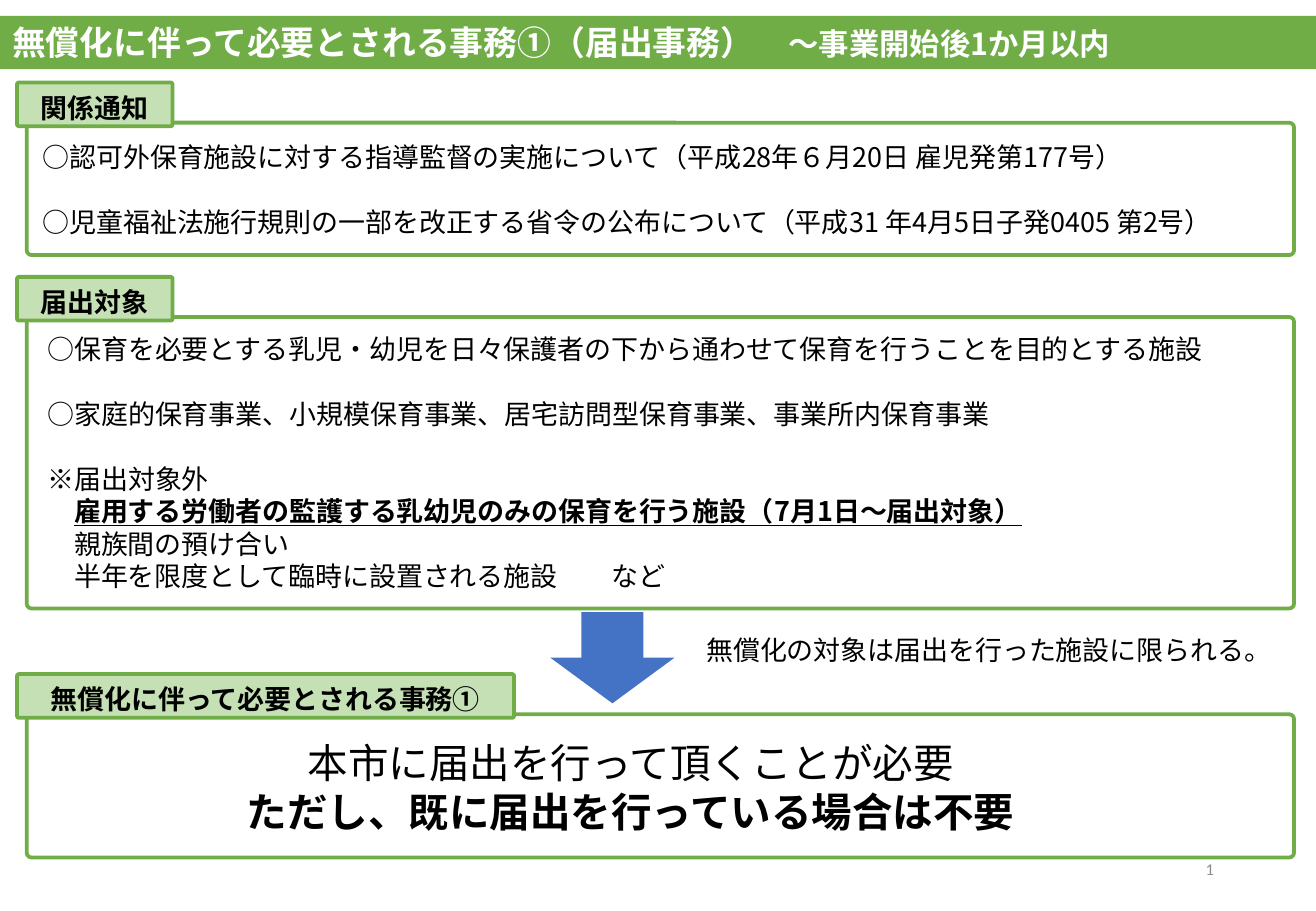
from lxml.etree import SubElement
from pptx import Presentation
from pptx.dml.color import RGBColor
from pptx.enum.shapes import MSO_SHAPE
from pptx.enum.text import MSO_ANCHOR, MSO_AUTO_SIZE, PP_ALIGN
from pptx.oxml.ns import qn
from pptx.util import Inches, Pt

GREEN = RGBColor(0x70, 0xAD, 0x47)
PALE_GREEN = RGBColor(0xC5, 0xE0, 0xB4)
BLUE = RGBColor(0x44, 0x72, 0xC4)
GREY = RGBColor(0x8C, 0x8C, 0x8C)
WHITE = RGBColor(0xFF, 0xFF, 0xFF)
BLACK = RGBColor(0, 0, 0)
FONT = "Noto Sans CJK JP"
LINE_HEIGHT = 1.2
CORNER = 0.04
GAP = {"space_after": Pt(19.2)}
INDENT = 0.22

# Each paragraph is (runs, paragraph format, left indent); each run is (text, font format).
TITLE = [([("無償化に伴って必要とされる事務①（届出事務）　", {"size": Pt(20), "bold": True}),
           ("～事業開始後1か月以内", {"size": Pt(18), "bold": True})], {}, 0)]
NOTICES = [
    ([("○認可外保育施設に対する指導監督の実施について（平成28年６月20日 雇児発第177号）", {})], GAP, 0),
    ([("○児童福祉法施行規則の一部を改正する省令の公布について（平成31 年4月5日子発0405 第2号）", {})], {}, 0),
]
TARGETS = [
    ([("○保育を必要とする乳児・幼児を日々保護者の下から通わせて保育を行うことを目的とする施設", {})], GAP, 0),
    ([("○家庭的保育事業、小規模保育事業、居宅訪問型保育事業、事業所内保育事業", {})], GAP, 0),
    ([("※届出対象外", {})], {}, 0),
    ([("雇用する労働者の監護する乳幼児のみの保育を行う施設（7月1日～届出対象）",
       {"bold": True, "underline": True})], {}, INDENT),
    ([("親族間の預け合い", {})], {}, INDENT),
    ([("半年を限度として臨時に設置される施設　　など", {})], {}, INDENT),
]
CENTERED = {"alignment": PP_ALIGN.CENTER}
REMARK = [([("無償化の対象は届出を行った施設に限られる。", {})], CENTERED, 0)]
CONCLUSION = [
    ([("本市に届出を行って頂くことが必要", {})], CENTERED, 0),
    ([("ただし、既に届出を行っている場合は不要", {"bold": True})], CENTERED, 0),
]
# label, label width, panel top, panel height
SECTIONS = [
    ("関係通知", 1.28, 1.01, 1.09),
    ("届出対象", 1.28, 2.61, 2.4),
    ("無償化に伴って必要とされる事務①", 4.09, 5.88, 1.18),
]


def set_values(target, values):
    for name, value in values.items():
        setattr(target, name, value)


def place(shape, left, top, width, height):
    set_values(shape, {"left": Inches(left), "top": Inches(top),
                       "width": Inches(width), "height": Inches(height)})


def write(shape, paragraphs, size=16, color=BLACK, anchor=MSO_ANCHOR.TOP):
    frame = shape.text_frame
    set_values(frame, {"word_wrap": True, "auto_size": MSO_AUTO_SIZE.NONE, "vertical_anchor": anchor})
    for number, (runs, paragraph_format, indent) in enumerate(paragraphs):
        paragraph = frame.paragraphs[0] if number == 0 else frame.add_paragraph()
        largest = max(font_format.get("size", Pt(size)) for _, font_format in runs)
        set_values(paragraph, {"alignment": PP_ALIGN.LEFT, "space_before": Pt(0), "space_after": Pt(0),
                               "line_spacing": Pt(largest.pt * LINE_HEIGHT), **paragraph_format})
        properties = paragraph._p.get_or_add_pPr()
        properties.set("marL", str(Inches(indent)))
        properties.set("indent", "0")
        SubElement(properties, qn("a:buNone"))
        for text, font_format in runs:
            run = paragraph.add_run()
            run.text = text
            set_values(run.font, {"name": FONT, "size": Pt(size), "bold": False, **font_format})
            run.font.color.rgb = color
            SubElement(run._r.get_or_add_rPr(), qn("a:ea")).set("typeface", FONT)


def add_shape(slide, kind, box, fill=None, line=None, corner=None):
    shape = slide.shapes.add_shape(kind, *map(Inches, box))
    shape.shadow.inherit = False
    if fill is None:
        shape.fill.background()
    else:
        shape.fill.solid()
        shape.fill.fore_color.rgb = fill
    if line is None:
        shape.line.fill.background()
    else:
        shape.line.color.rgb = line
        shape.line.width = Pt(2.25)
    if corner is not None:
        shape.adjustments[0] = corner / box[3]
    return shape


def add_section(slide, label, label_width, top, height):
    add_shape(slide, MSO_SHAPE.ROUNDED_RECTANGLE, (0.22, top, 10.43, height), None, GREEN, CORNER)
    tab = add_shape(slide, MSO_SHAPE.ROUNDED_RECTANGLE, (0.14, top - 0.33, label_width, 0.36),
                    PALE_GREEN, GREEN, 0.015)
    set_values(tab.text_frame, {"margin_top": Inches(0.1), "margin_bottom": Inches(0.05)})
    write(tab, [([(label, {"bold": True})], CENTERED, 0)], anchor=MSO_ANCHOR.MIDDLE)


def add_text(slide, box, paragraphs, size=16):
    write(slide.shapes.add_textbox(*map(Inches, box)), paragraphs, size)


def add_slide_number(slide):
    box = slide.shapes.add_textbox(Inches(7.65), Inches(6.95), Inches(2.44), Inches(0.4))
    set_values(box.text_frame, {"word_wrap": True, "vertical_anchor": MSO_ANCHOR.MIDDLE})
    paragraph = box.text_frame.paragraphs[0]
    paragraph.alignment = PP_ALIGN.RIGHT
    set_values(paragraph.font, {"name": "Calibri", "size": Pt(9.8)})
    paragraph.font.color.rgb = GREY
    field = SubElement(paragraph._p, qn("a:fld"), id="{B6F15528-21DE-4FAA-801E-634DDDAF4B2B}", type="slidenum")
    properties = SubElement(field, qn("a:rPr"), lang="ja-JP", sz="980")
    fill = SubElement(properties, qn("a:solidFill"))
    SubElement(fill, qn("a:srgbClr"), val=str(GREY))
    SubElement(properties, qn("a:latin"), typeface="Calibri")
    SubElement(field, qn("a:t")).text = "1"


def main():
    presentation = Presentation()
    set_values(presentation, {"slide_width": Inches(10.83), "slide_height": Inches(7.5)})
    slide = presentation.slides.add_slide(presentation.slide_layouts[3])
    title, notices, targets = slide.placeholders

    place(title, 0, 0.13, 10.83, 0.44)
    title.fill.solid()
    title.fill.fore_color.rgb = GREEN
    write(title, TITLE, color=WHITE, anchor=MSO_ANCHOR.MIDDLE)
    place(notices, 0.25, 1.11, 10.54, 0.91)
    write(notices, NOTICES)
    place(targets, 0.29, 2.69, 10.54, 3.06)
    write(targets, TARGETS)

    for section in SECTIONS:
        add_section(slide, *section)
    add_shape(slide, MSO_SHAPE.DOWN_ARROW, (4.53, 5.04, 1.02, 0.75), BLUE)
    add_text(slide, (5.62, 5.17, 5.04, 0.37), REMARK)
    add_text(slide, (0.79, 6.03, 8.8, 0.91), CONCLUSION, 24)
    add_slide_number(slide)
    presentation.save("out.pptx")


if __name__ == "__main__":
    main()
